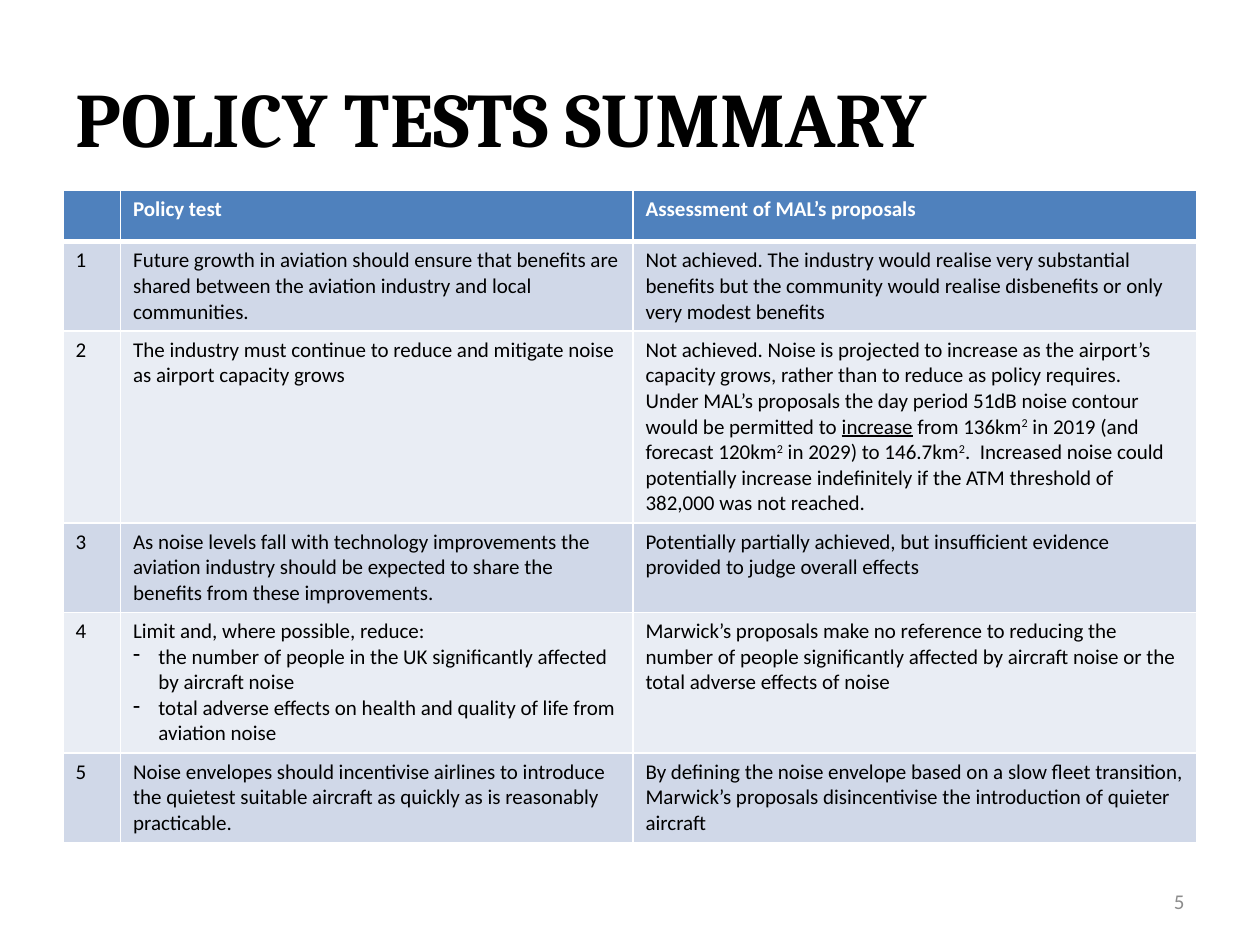
from pptx import Presentation
from pptx.dml.color import RGBColor
from pptx.enum.text import MSO_ANCHOR, PP_ALIGN
from pptx.oxml.ns import qn
from pptx.util import Cm, Pt
from lxml import etree

LEFT, RIGHT = PP_ALIGN.LEFT, PP_ALIGN.RIGHT
MIDDLE = MSO_ANCHOR.MIDDLE
HUES = {"head": "4F81BD", "odd": "D0D8E8", "even": "E9EDF4",
        "ink": "000000", "white": "FFFFFF", "grey": "8C8C8C"}

# A cell is a list of paragraphs, a paragraph a list of runs.
# A run is plain text or (text, mark); a paragraph led by DASH is a bullet.
DASH, LINE, SUPER = "-", "line", "super"
SQUARE = ("2", SUPER)
HEAD = ["", "Policy test", "Assessment of MAL’s proposals"]
TESTS = [
    ([["Future growth in aviation should ensure that benefits are shared "
       "between the aviation industry and local communities."]],
     [["Not achieved. The industry would realise very substantial benefits "
       "but the community would realise disbenefits or only very modest "
       "benefits"]]),
    ([["The industry must continue to reduce and mitigate noise as airport "
       "capacity grows"]],
     [["Not achieved. Noise is projected to increase as the airport’s "
       "capacity grows, rather than to reduce as policy requires."],
      ["Under MAL’s proposals the day period 51dB noise contour would be "
       "permitted to ", ("increase", LINE), " from 136km", SQUARE,
       " in 2019 (and forecast 120km", SQUARE, " in 2029) to 146.7km", SQUARE,
       ".  Increased noise could potentially increase indefinitely if the "
       "ATM threshold of 382,000 was not reached."]]),
    ([["As noise levels fall with technology improvements the aviation "
       "industry should be expected to share the benefits from these "
       "improvements."]],
     [["Potentially partially achieved, but insufficient evidence provided "
       "to judge overall effects"]]),
    ([["Limit and, where possible, reduce:"],
      [DASH, "the number of people in the UK significantly affected by "
       "aircraft noise"],
      [DASH, "total adverse effects on health and quality of life from "
       "aviation noise"]],
     [["Marwick’s proposals make no reference to reducing the number of "
       "people significantly affected by aircraft noise or the total adverse "
       "effects of noise"]]),
    ([["Noise envelopes should incentivise airlines to introduce the "
       "quietest suitable aircraft as quickly as is reasonably "
       "practicable."]],
     [["By defining the noise envelope based on a slow fleet transition, "
       "Marwick’s proposals disincentivise the introduction of quieter "
       "aircraft"]]),
]
WIDTHS = [1.16, 10.33, 11.37]
HEIGHTS = [1.04, 1.78, 3.82, 1.78, 2.8, 1.78]


def rgb(hue):
    return RGBColor.from_string(HUES[hue])


class Page:
    font, size = "Calibri", 12

    def __init__(self, deck):
        self.slide = deck.slides.add_slide(deck.slide_layouts[5])

    def run(self, para, item, hue="ink", bold=False, font=None, size=None):
        text, mark = (item, None) if isinstance(item, str) else item
        run = para.add_run()
        run.text = text
        run.font.name = font or self.font
        run.font.size = Pt(size or self.size)
        run.font.bold = bold
        run.font.color.rgb = rgb(hue)
        if mark == LINE:
            run.font.underline = True
        elif mark == SUPER:
            run._r.get_or_add_rPr().set("baseline", "30000")

    def title(self, text, left, top, width, height):
        box = self.slide.shapes.title
        box.left, box.top = Cm(left), Cm(top)
        box.width, box.height = Cm(width), Cm(height)
        box.text_frame.vertical_anchor = MIDDLE
        para = box.text_frame.paragraphs[0]
        para.alignment = LEFT
        self.run(para, text, bold=True, font="Cambria", size=44)

    def number(self, text, left, top, width, height):
        box = self.slide.shapes.add_textbox(
            Cm(left), Cm(top), Cm(width), Cm(height))
        frame = box.text_frame
        frame.word_wrap = True
        frame.vertical_anchor = MIDDLE
        frame.paragraphs[0].alignment = RIGHT
        self.run(frame.paragraphs[0], text, "grey")

    def bullet(self, para):
        props = para._p.get_or_add_pPr()
        props.set("marL", str(Cm(0.51)))
        props.set("indent", str(-Cm(0.51)))
        etree.SubElement(props, qn("a:buChar")).set("char", DASH)

    def edge(self, cell, side, width):
        line = etree.SubElement(cell._tc.get_or_add_tcPr(), qn("a:ln" + side))
        line.set("w", str(Pt(width)))
        fill = etree.SubElement(line, qn("a:solidFill"))
        etree.SubElement(fill, qn("a:srgbClr")).set("val", HUES["white"])

    def cell(self, cell, paras, fill, top=1, base=1, hue="ink", bold=False):
        for side, width in zip("LRTB", (1, 1, top, base)):
            self.edge(cell, side, width)
        cell.fill.solid()
        cell.fill.fore_color.rgb = rgb(fill)
        frame = cell.text_frame
        for i, runs in enumerate(paras):
            para = frame.add_paragraph() if i else frame.paragraphs[0]
            if runs[0] == DASH:
                self.bullet(para)
                runs = runs[1:]
            for item in runs:
                self.run(para, item, hue, bold)

    def table(self, head, tests, left, top):
        grid = self.slide.shapes.add_table(
            len(HEIGHTS), len(WIDTHS), Cm(left), Cm(top),
            Cm(sum(WIDTHS)), Cm(sum(HEIGHTS))).table
        for col, width in zip(grid.columns, WIDTHS):
            col.width = Cm(width)
        for row, height in zip(grid.rows, HEIGHTS):
            row.height = Cm(height)
        # Header row, with a thick rule below
        for c, text in enumerate(head):
            self.cell(grid.cell(0, c), [[text]] if text else [], "head",
                      base=3, hue="white", bold=True)
        # Numbered tests in bands
        for r, (test, view) in enumerate(tests, 1):
            for c, paras in enumerate(([[str(r)]], test, view)):
                self.cell(grid.cell(r, c), paras, "odd" if r % 2 else "even",
                          top=3 if r == 1 else 1)


def main():
    deck = Presentation()
    deck.slide_width, deck.slide_height = Cm(25.4), Cm(19.05)
    page = Page(deck)
    page.title("POLICY TESTS SUMMARY", 1.27, 0.76, 22.86, 3.18)
    page.table(HEAD, TESTS, 1.27, 3.83)
    page.number("5", 18.2, 17.66, 5.93, 1.01)
    deck.save("out.pptx")


if __name__ == "__main__":
    main()
